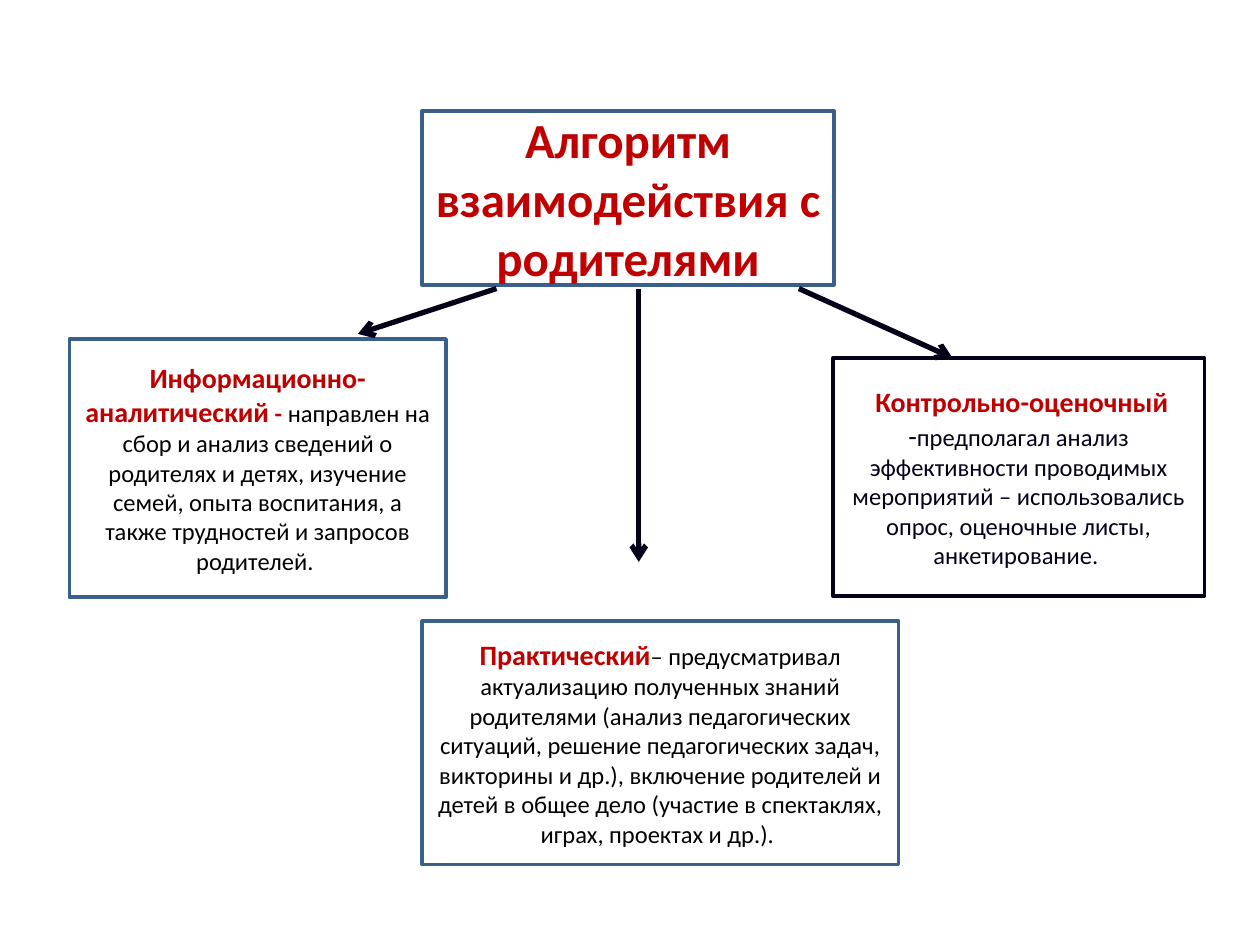
"""Build a slide showing the algorithm of work with parents as boxes and arrows."""
from lxml.etree import SubElement
from pptx import Presentation
from pptx.dml.color import RGBColor
from pptx.enum.shapes import MSO_CONNECTOR as Connector, MSO_SHAPE as Shape
from pptx.enum.text import MSO_ANCHOR as Anchor, PP_ALIGN as Align
from pptx.oxml.ns import qn
from pptx.util import Pt

RED, BLUE, DARK, BLACK, WHITE = "C00000", "3A5F8C", "040119", "000000", "FFFFFF"

# (left, top, width, height), outline, [(text, size, colour, bold)]
BOXES = [
    ((241.2, 63.4, 235.4, 99.4), BLUE, [
        ("Алгоритм взаимодействия с родителями", 28, RED, True),
    ]),
    ((39.6, 193.7, 215.3, 147.6), BLUE, [
        ("Информационно-аналитический", 16, RED, True),
        (" - ", 14, RED, True),
        ("направлен на сбор и анализ сведений о родителях и детях, изучение семей, "
         "опыта воспитания, а также трудностей и запросов родителей. ", 14, BLACK, False),
    ]),
    ((241.2, 355, 272.2, 139), BLUE, [
        ("Практический", 16, RED, True),
        ("– предусматривал актуализацию полученных знаний родителями (анализ "
         "педагогических ситуаций, решение педагогических задач, викторины и др.), "
         "включение родителей и детей в общее дело (участие в спектаклях, играх, "
         "проектах и др.). ", 14, BLACK, False),
    ]),
    ((475.9, 204.5, 212.4, 136.1), DARK, [
        (" Контрольно-оценочный ", 16, RED, True),
        ("-", 16, DARK, False),
        ("предполагал анализ эффективности проводимых мероприятий – использовались "
         "опрос, оценочные листы, анкетирование. ", 14, DARK, False),
    ]),
]

ARROW_TOP = 164.9
ARROWS = [(283.7, 204.5, 190.8), (365, 365, 321.1), (456.5, 544.3, 204.5)]


def colour(code):
    return RGBColor.from_string(code)


def add_box(page, place, outline, spans):
    box = page.shapes.add_shape(Shape.RECTANGLE, *map(Pt, place))
    box.shadow.inherit = False
    box.fill.solid()
    box.fill.fore_color.rgb = colour(WHITE)
    box.line.color.rgb = colour(outline)
    box.line.width = Pt(2)
    frame = box.text_frame
    frame.word_wrap = True
    frame.vertical_anchor = Anchor.MIDDLE
    para = frame.paragraphs[0]
    para.alignment = Align.CENTER
    for text, size, shade, bold in spans:
        span = para.add_run()
        span.text = text
        span.font.name = "Calibri"
        span.font.size = Pt(size)
        span.font.bold = bold
        span.font.color.rgb = colour(shade)


def add_arrow(page, start_x, end_x, end_y):
    arrow = page.shapes.add_connector(
        Connector.STRAIGHT, Pt(start_x), Pt(ARROW_TOP), Pt(end_x), Pt(end_y))
    arrow.line.color.rgb = colour(DARK)
    arrow.line.width = Pt(3)
    SubElement(arrow.line._get_or_add_ln(), qn("a:tailEnd"), type="arrow")
    SubElement(arrow._element.spPr, qn("a:effectLst"))


def main():
    deck = Presentation()
    deck.slide_width, deck.slide_height = Pt(720), Pt(540)
    page = deck.slides.add_slide(deck.slide_layouts[6])
    for box in BOXES:
        add_box(page, *box)
    for arrow in ARROWS:
        add_arrow(page, *arrow)
    deck.save("out.pptx")


if __name__ == "__main__":
    main()
